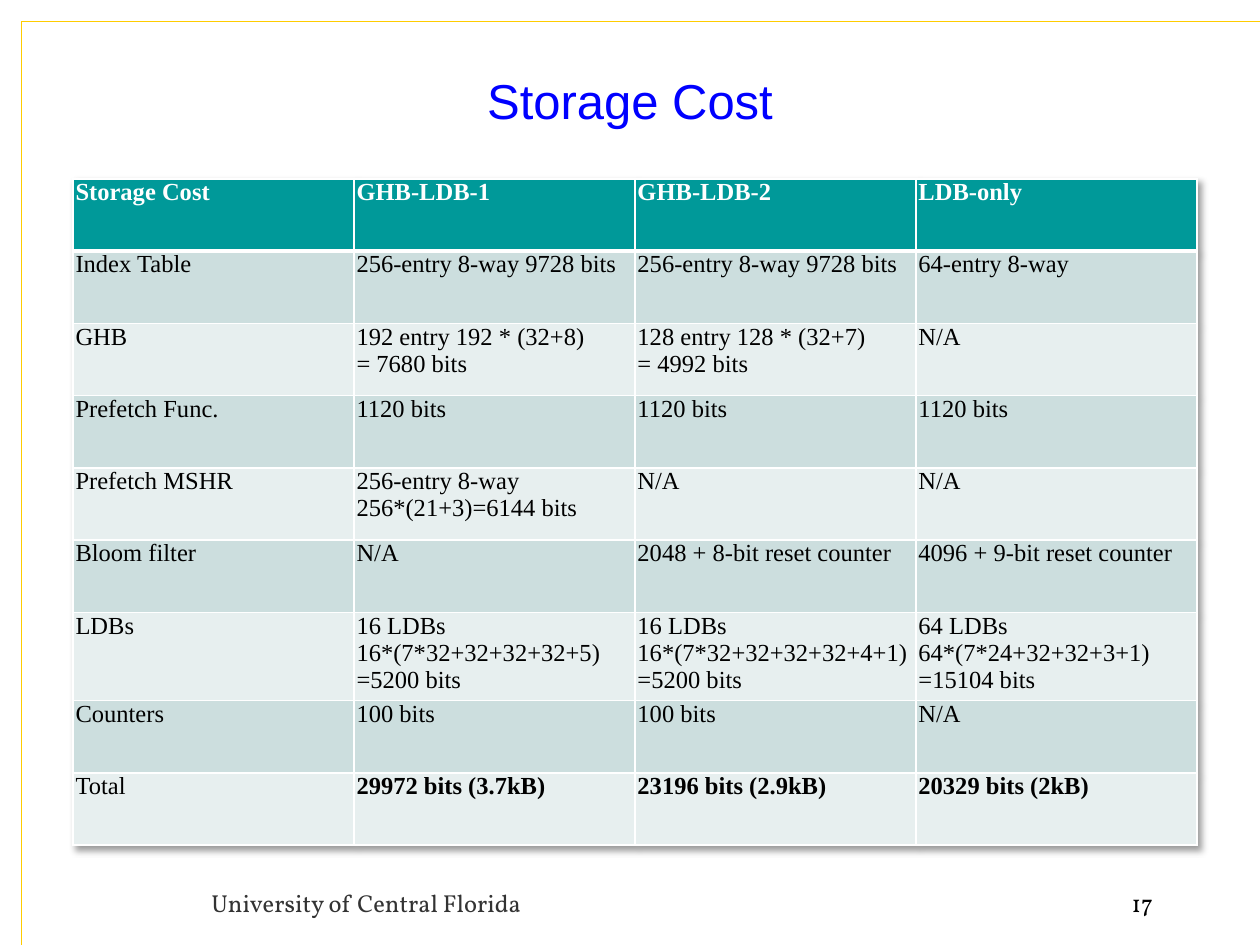
from lxml.etree import SubElement
from pptx import Presentation
from pptx.dml.color import RGBColor
from pptx.enum.shapes import MSO_CONNECTOR
from pptx.enum.text import MSO_ANCHOR, PP_ALIGN
from pptx.oxml import parse_xml
from pptx.oxml.ns import nsdecls, qn
from pptx.util import Inches, Pt

COLORS = {
    "frame": "FFCC00",
    "title": "0000FF",
    "footer": "333333",
    "text": "000000",
    "header": "009999",
    "odd": "CCDEDE",
    "even": "E7EFEF",
    "white": "FFFFFF",
}

COSTS = [
    ["Storage Cost", "GHB-LDB-1", "GHB-LDB-2", "LDB-only"],
    ["Index Table", "256-entry 8-way 9728 bits", "256-entry 8-way 9728 bits", "64-entry 8-way"],
    ["GHB", "192 entry 192 * (32+8)\n= 7680 bits", "128 entry 128 * (32+7)\n= 4992 bits", "N/A"],
    ["Prefetch Func.", "1120 bits", "1120 bits", "1120 bits"],
    ["Prefetch MSHR", "256-entry 8-way\n256*(21+3)=6144 bits", "N/A", "N/A"],
    ["Bloom filter", "N/A", "2048 + 8-bit reset counter", "4096 + 9-bit reset counter"],
    ["LDBs", "16 LDBs\n16*(7*32+32+32+32+5)\n=5200 bits",
     "16 LDBs\n16*(7*32+32+32+32+4+1)=5200 bits",
     "64 LDBs\n64*(7*24+32+32+3+1)\n=15104 bits"],
    ["Counters", "100 bits", "100 bits", "N/A"],
    ["Total", "29972 bits (3.7kB)", "23196 bits (2.9kB)", "20329 bits (2kB)"],
]


class SlideBuilder:
    def __init__(self, slide):
        self.slide = slide
        self.body_font = "Times New Roman"
        self.body_size = 14

    def color(self, name):
        return RGBColor.from_string(COLORS[name])

    def line(self, x1, y1, x2, y2, color, width):
        rule = self.slide.shapes.add_connector(
            MSO_CONNECTOR.STRAIGHT, Inches(x1), Inches(y1), Inches(x2), Inches(y2))
        rule.line.color.rgb = self.color(color)
        rule.line.width = Pt(width)
        SubElement(rule._element.spPr, qn("a:effectLst"))

    def add_runs(self, frame, text, font, size, color, align=PP_ALIGN.LEFT, bold=False):
        for index, content in enumerate(text.split("\n")):
            paragraph = frame.add_paragraph() if index else frame.paragraphs[0]
            paragraph.alignment = align
            run = paragraph.add_run()
            run.text = content
            run.font.name = font
            run.font.size = Pt(size)
            run.font.bold = bold
            run.font.color.rgb = self.color(color)

    def text(self, x, y, w, h, content, font, size, color,
             align=PP_ALIGN.LEFT, anchor=MSO_ANCHOR.TOP):
        frame = self.slide.shapes.add_textbox(
            Inches(x), Inches(y), Inches(w), Inches(h)).text_frame
        frame.word_wrap = True
        frame.vertical_anchor = anchor
        self.add_runs(frame, content, font, size, color, align)

    def borders(self, cell, top, bottom):
        widths = {"L": 1, "R": 1, "T": top, "B": bottom}
        for index, (side, width) in enumerate(widths.items()):
            cell._tc.get_or_add_tcPr().insert(index, parse_xml(
                f'<a:ln{side} {nsdecls("a")} w="{Pt(width)}"><a:solidFill>'
                f'<a:srgbClr val="{COLORS["white"]}"/></a:solidFill></a:ln{side}>'))

    def shadow(self, table):
        table._tbl.tblPr.insert(0, parse_xml(
            f'<a:effectLst {nsdecls("a")}><a:outerShdw blurRad="{Pt(4)}" dist="{Pt(3)}" '
            f'dir="2700000" algn="tl" rotWithShape="0"><a:srgbClr val="{COLORS["text"]}">'
            '<a:alpha val="40000"/></a:srgbClr></a:outerShdw></a:effectLst>'))

    def table(self, x, y, w, h, rows):
        table = self.slide.shapes.add_table(
            len(rows), len(rows[0]), Inches(x), Inches(y), Inches(w), Inches(h)).table
        self.shadow(table)
        for r, row in enumerate(rows):
            header = r == 0
            fill = "header" if header else "odd" if r % 2 else "even"
            for c, content in enumerate(row):
                cell = table.cell(r, c)
                cell.margin_left = cell.margin_right = Inches(0.02)
                cell.margin_top = cell.margin_bottom = 0
                cell.fill.solid()
                cell.fill.fore_color.rgb = self.color(fill)
                self.borders(cell, 3 if r == 1 else 1, 3 if header else 1)
                total = r == len(rows) - 1 and c > 0
                self.add_runs(cell.text_frame, content, self.body_font, self.body_size,
                              "white" if header else "text", bold=header or total)


def main():
    deck = Presentation()
    deck.slide_width, deck.slide_height = Inches(10), Inches(7.5)
    builder = SlideBuilder(deck.slides.add_slide(deck.slide_layouts[6]))
    builder.line(0.17, 0.17, 0.17, 7.5, "frame", 0.75)
    builder.line(0.17, 0.17, 10, 0.17, "frame", 1)
    builder.text(0.25, 0.42, 9.5, 0.75, "Storage Cost", "Arial", 28, "title",
                 PP_ALIGN.CENTER, MSO_ANCHOR.MIDDLE)
    builder.text(1.58, 7, 6.83, 0.33, "University of Central Florida", "Vollkorn", 14, "footer")
    builder.text(8.33, 7, 0.92, 0.33, "17", "Vollkorn", 14, "text", PP_ALIGN.RIGHT)
    builder.table(0.58, 1.42, 8.92, 5.16, COSTS)
    deck.save("out.pptx")


if __name__ == "__main__":
    main()
